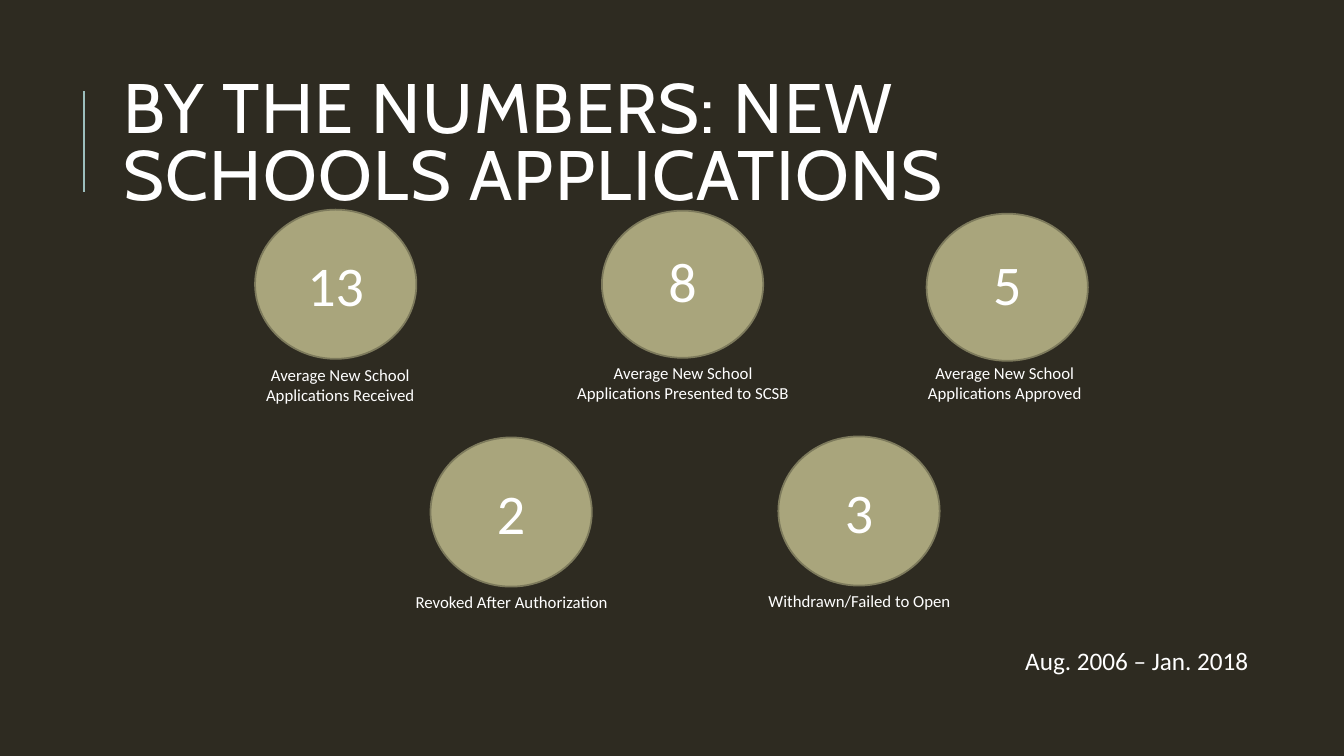
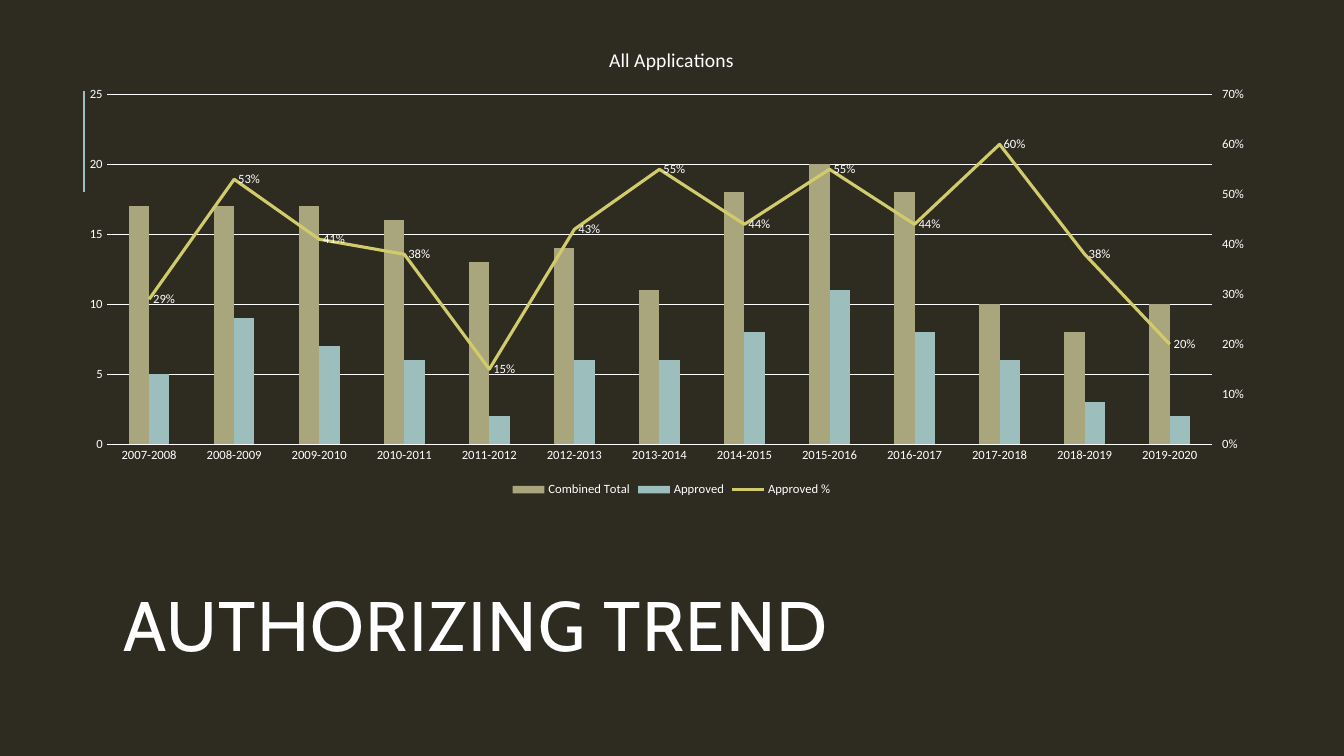
from copy import deepcopy
from dataclasses import dataclass

from lxml.etree import SubElement
from pptx import Presentation
from pptx.chart.axis import ValueAxis
from pptx.chart.data import CategoryChartData
from pptx.dml.color import RGBColor
from pptx.enum.chart import (XL_CHART_TYPE, XL_LABEL_POSITION, XL_LEGEND_POSITION,
                             XL_MARKER_STYLE, XL_TICK_MARK)
from pptx.enum.shapes import MSO_CONNECTOR, MSO_SHAPE
from pptx.enum.text import MSO_ANCHOR, MSO_AUTO_SIZE, PP_ALIGN
from pptx.oxml import parse_xml
from pptx.oxml.ns import nsdecls, qn
from pptx.util import Pt


@dataclass(frozen=True)
class Theme:
    background: RGBColor = RGBColor.from_string("2E2B21")
    text: RGBColor = RGBColor.from_string("FFFFFF")
    olive: RGBColor = RGBColor.from_string("A9A57C")
    olive_edge: RGBColor = RGBColor.from_string("7D7A5C")
    teal: RGBColor = RGBColor.from_string("9CBEBD")
    yellow: RGBColor = RGBColor.from_string("D2CB6C")
    title_font: str = "Cabin"
    body_font: str = "Calibri"
    title_size: int = 50
    number_size: int = 40
    date_size: int = 18
    chart_title_size: int = 14
    caption_size: int = 12
    chart_size: int = 10
    axis_size: int = 9


THEME = Theme()
PX = 9144  # EMU, 100 px to the inch
SLIDE_SIZE = (1333, 750)
TITLE_RULE = (83, 190, 83, 90)

NUMBERS_TITLE = ("BY THE NUMBERS: NEW SCHOOLS APPLICATIONS", (112, 64, 1130, 164))
CIRCLE_WIDTH, CAPTION_WIDTH = 160, 239
# number, caption lines, circle (left, top, height), caption (left, top, height), tight
NUMBERS = [
    ("13", ["Average New School", "Applications Received"], (253, 208, 148), (218, 357, 50), False),
    ("8", ["Average New School", "Applications Presented to SCSB"],
     (597, 209, 146), (558, 355, 50), True),
    ("5", ["Average New School", "Applications Approved"], (919, 212, 146), (877, 355, 50), True),
    ("2", ["Revoked After Authorization"], (427, 434, 148), (388, 582, 30), False),
    ("3", ["Withdrawn/Failed to Open"], (772, 433, 148), (733, 581, 30), False),
]
DATE_RANGE = ("Aug. 2006 – Jan. 2018", (1007, 635, 266, 40))

TREND_TITLE = ("AUTHORIZING TREND", (112, 544, 1063, 164))
TREND_BOX = (70, 28, 1192, 469)
TREND_PLOT = {"x": 0.03, "y": 0.14, "w": 0.92, "h": 0.74}
TREND_NAME = "All Applications"
SCHOOL_YEARS = [f"{year}-{year + 1}" for year in range(2007, 2020)]
COUNTS = [
    ("Combined Total", [17, 17, 17, 16, 13, 14, 11, 18, 20, 18, 10, 8, 10], THEME.olive),
    ("Approved", [5, 9, 7, 6, 2, 6, 6, 8, 11, 8, 6, 3, 2], THEME.teal),
]
APPROVAL_RATE = ("Approved %", [0.29, 0.53, 0.41, 0.38, 0.15, 0.43, 0.55, 0.44, 0.55,
                                0.44, 0.6, 0.38, 0.2], THEME.yellow)


def px(*lengths):
    return [length * PX for length in lengths]


def set_font(font, size, name=THEME.body_font):
    font.name, font.size, font.bold = name, Pt(size), False
    font.color.rgb = THEME.text


def set_line(line, color, width):
    line.color.rgb, line.width = color, Pt(width)


def write_lines(frame, lines, size, align=PP_ALIGN.CENTER):
    frame.text = "\n".join(lines)
    frame.word_wrap = True
    for paragraph in frame.paragraphs:
        paragraph.alignment = align
        set_font(paragraph.font, size)


def add_text(slide, box, lines, size, align=PP_ALIGN.CENTER):
    write_lines(slide.shapes.add_textbox(*px(*box)).text_frame, lines, size, align)


def add_slide(prs, text, box):
    """Add a slide with the shared title style and the rule beside it."""
    slide = prs.slides.add_slide(prs.slide_layouts[5])
    rule = slide.shapes.add_connector(MSO_CONNECTOR.STRAIGHT, *px(*TITLE_RULE))
    set_line(rule.line, THEME.teal, 1.5)
    SubElement(rule.element.spPr, qn("a:effectLst"))

    title = slide.shapes.title
    title.left, title.top, title.width, title.height = px(*box)
    frame = title.text_frame
    frame.text = text
    frame.word_wrap, frame.auto_size = True, MSO_AUTO_SIZE.NONE
    frame.vertical_anchor = MSO_ANCHOR.MIDDLE
    frame.margin_right = 40 * PX
    heading = frame.paragraphs[0]
    heading.alignment, heading.line_spacing = PP_ALIGN.LEFT, 0.8
    set_font(heading.font, THEME.title_size, THEME.title_font)
    heading.font._element.set("spc", "100")
    return slide


def add_number(slide, number, caption, circle_place, caption_place, tight):
    left, top, height = circle_place
    circle = slide.shapes.add_shape(MSO_SHAPE.FLOWCHART_CONNECTOR,
                                    *px(left, top, CIRCLE_WIDTH, height))
    circle.shadow.inherit = False
    circle.fill.solid()
    circle.fill.fore_color.rgb = THEME.olive
    set_line(circle.line, THEME.olive_edge, 1.25)
    circle.text_frame.vertical_anchor = MSO_ANCHOR.MIDDLE
    write_lines(circle.text_frame, [number], THEME.number_size)
    if tight:
        paragraph = circle.text_frame.paragraphs[0]
        paragraph.line_spacing, paragraph.space_after = 0.9, Pt(2)

    left, top, height = caption_place
    add_text(slide, (left, top, CAPTION_WIDTH, height), caption, THEME.caption_size)


def move_last_series_to_right_axis(plot_area):
    """Turn the last column series into a line on a second value axis."""
    columns = plot_area.find(qn("c:barChart"))
    rate = columns.findall(qn("c:ser"))[-1]
    for bar_only in rate.findall(qn("c:invertIfNegative")):
        rate.remove(bar_only)
    line_chart = parse_xml(
        f'<c:lineChart {nsdecls("c")}><c:grouping val="standard"/><c:varyColors val="0"/>'
        '<c:marker val="1"/><c:axId val="50010"/><c:axId val="50020"/></c:lineChart>')
    line_chart.insert(2, rate)
    columns.addnext(line_chart)

    value_axis = plot_area.find(qn("c:valAx"))
    right_axis = deepcopy(value_axis)
    hidden_axis = deepcopy(plot_area.find(qn("c:catAx")))
    value_axis.addnext(right_axis)
    right_axis.addnext(hidden_axis)
    for axis, changes in (
        (right_axis, {"axId": "50020", "crossAx": "50010", "axPos": "r", "crosses": "max"}),
        (hidden_axis, {"axId": "50010", "crossAx": "50020", "delete": "1"}),
    ):
        for tag, value in changes.items():
            axis.find(qn("c:" + tag)).set("val", value)
    return ValueAxis(right_axis)


def set_plot_place(plot_area, place):
    for layout in plot_area.findall(qn("c:layout")):
        plot_area.remove(layout)
    sides = "".join(f'<c:{side} val="{share}"/>' for side, share in place.items())
    plot_area.insert(0, parse_xml(
        f'<c:layout {nsdecls("c")}><c:manualLayout><c:layoutTarget val="inner"/>'
        f'<c:xMode val="edge"/><c:yMode val="edge"/>{sides}</c:manualLayout></c:layout>'))


def format_axes(chart):
    years, counts = chart.category_axis, chart.value_axis
    for axis in (years, counts):
        axis.major_tick_mark = axis.minor_tick_mark = XL_TICK_MARK.NONE
        set_font(axis.tick_labels.font, THEME.axis_size)
    set_line(years.format.line, THEME.text, 0.75)
    counts.format.line.fill.background()
    counts.minimum_scale, counts.maximum_scale, counts.major_unit = 0, 25, 5
    counts.has_major_gridlines = True
    set_line(counts.major_gridlines.format.line, THEME.text, 0.75)


def add_trend_chart(slide):
    data = CategoryChartData()
    data.categories = SCHOOL_YEARS
    for name, values, _ in COUNTS:
        data.add_series(name, values, "0")
    rate_name, rates, rate_color = APPROVAL_RATE
    data.add_series(rate_name, rates, "0%")
    chart = slide.shapes.add_chart(XL_CHART_TYPE.COLUMN_CLUSTERED, *px(*TREND_BOX), data).chart

    set_font(chart.font, THEME.chart_size)
    chart.has_title = True
    chart.chart_title.include_in_layout = False
    chart.chart_title.text_frame.text = TREND_NAME
    set_font(chart.chart_title.text_frame.paragraphs[0].font, THEME.chart_title_size)
    chart.has_legend = True
    chart.legend.position = XL_LEGEND_POSITION.BOTTOM
    chart.legend.include_in_layout = False
    set_font(chart.legend.font, THEME.axis_size)
    format_axes(chart)

    plot_area = chart.element.find(".//" + qn("c:plotArea"))
    right_axis = move_last_series_to_right_axis(plot_area)
    right_axis.has_major_gridlines = False
    right_axis.maximum_scale, right_axis.major_unit = 0.7, 0.1
    right_axis.major_tick_mark = XL_TICK_MARK.OUTSIDE
    right_axis.tick_labels.number_format = "0%"
    right_axis.tick_labels.number_format_is_linked = False
    set_plot_place(plot_area, TREND_PLOT)

    columns, line = chart.plots
    columns.gap_width, columns.overlap, columns.vary_by_categories = 219, 0, False
    for series, (_, _, color) in zip(columns.series, COUNTS):
        series.format.fill.solid()
        series.format.fill.fore_color.rgb = color

    rate = line.series[0]
    set_line(rate.format.line, rate_color, 2.25)
    rate.smooth = False
    rate.marker.style = XL_MARKER_STYLE.NONE
    labels = rate.data_labels
    labels.show_value = True
    labels.number_format, labels.number_format_is_linked = "0%", False
    labels.position = XL_LABEL_POSITION.RIGHT
    set_font(labels.font, THEME.axis_size)


def main():
    prs = Presentation()
    prs.slide_width, prs.slide_height = px(*SLIDE_SIZE)
    background = prs.slide_master.background.fill
    background.solid()
    background.fore_color.rgb = THEME.background

    numbers = add_slide(prs, *NUMBERS_TITLE)
    for entry in NUMBERS:
        add_number(numbers, *entry)
    date_text, date_box = DATE_RANGE
    add_text(numbers, date_box, [date_text], THEME.date_size, PP_ALIGN.LEFT)

    trend = add_slide(prs, *TREND_TITLE)
    add_trend_chart(trend)
    prs.save("out.pptx")


if __name__ == "__main__":
    main()
